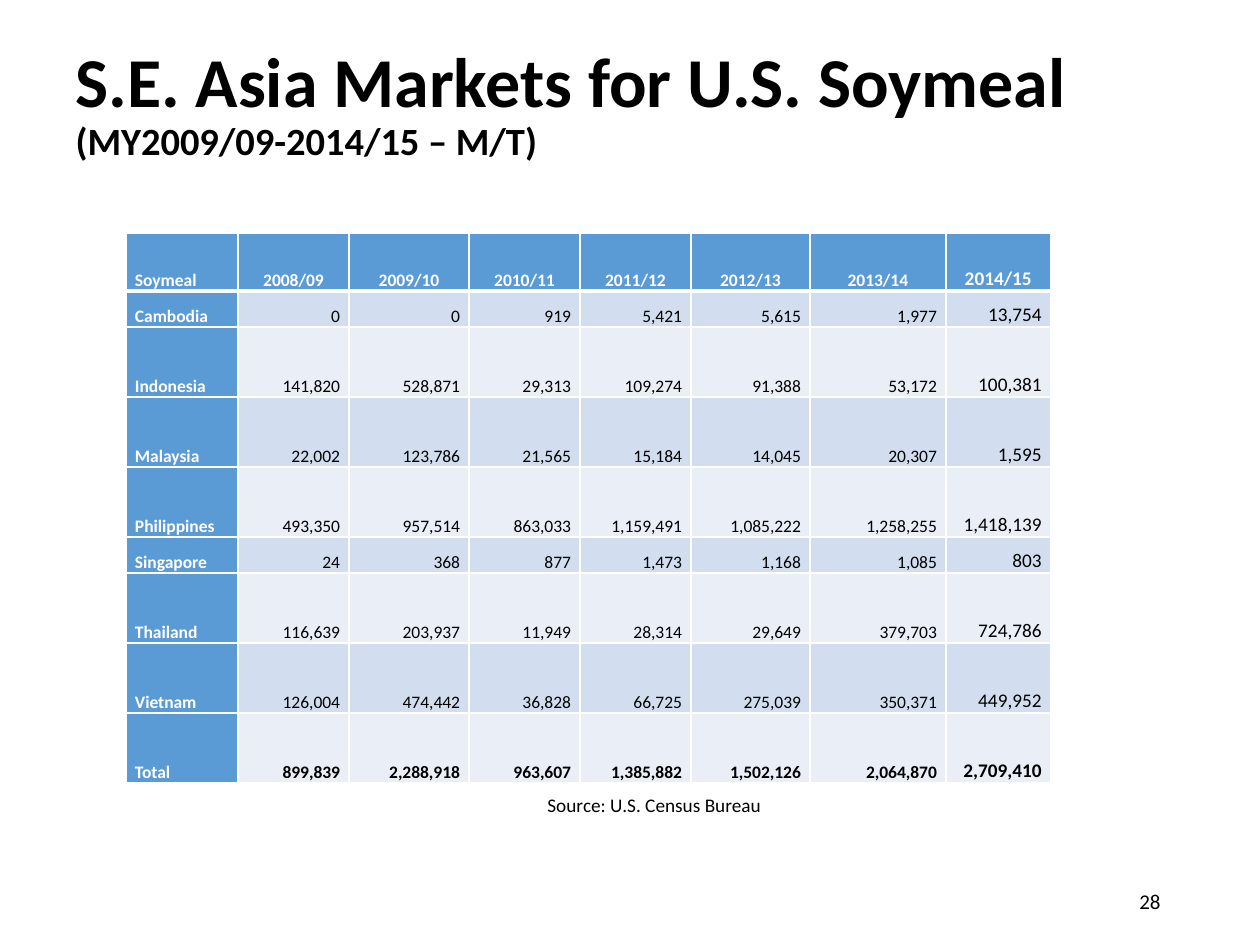
from lxml import etree
from pptx import Presentation
from pptx import util as u
from pptx.dml.color import RGBColor
from pptx.enum import text
from pptx.oxml.ns import qn

EMU_PER_PIXEL = 914400 / 126
FONT = "Calibri"
BLACK, WHITE = "000000", "FFFFFF"
BLUE, BAND_DARK, BAND_LIGHT = "5B9BD5", "D2DEEF", "EAEFF7"

COLUMN_WIDTHS = [112, 111, 120, 111, 111, 119, 136, 105]
HEADER_HEIGHT, LOW_HEIGHT, HIGH_HEIGHT = 58, 36, 70
LOW_ROWS = ("Cambodia", "Singapore")
EXPORTS = [
    ["Soymeal", "2008/09", "2009/10", "2010/11", "2011/12", "2012/13", "2013/14", "2014/15"],
    ["Cambodia", "0", "0", "919", "5,421", "5,615", "1,977", "13,754"],
    ["Indonesia", "141,820", "528,871", "29,313", "109,274", "91,388", "53,172", "100,381"],
    ["Malaysia", "22,002", "123,786", "21,565", "15,184", "14,045", "20,307", "1,595"],
    ["Philippines", "493,350", "957,514", "863,033", "1,159,491", "1,085,222", "1,258,255", "1,418,139"],
    ["Singapore", "24", "368", "877", "1,473", "1,168", "1,085", "803"],
    ["Thailand", "116,639", "203,937", "11,949", "28,314", "29,649", "379,703", "724,786"],
    ["Vietnam", "126,004", "474,442", "36,828", "66,725", "275,039", "350,371", "449,952"],
    ["Total", "899,839", "2,288,918", "963,607", "1,385,882", "1,502,126", "2,064,870", "2,709,410"],
]


def px(length):
    return u.Emu(round(length * EMU_PER_PIXEL))


def color(hex_string):
    return RGBColor.from_string(hex_string)


def format_run(run, size, hex_color=BLACK, bold=False):
    run.font.name = FONT
    run.font.size = u.Pt(size)
    run.font.bold = bold
    run.font.color.rgb = color(hex_color)


def set_title(slide):
    title = slide.shapes.title
    title.left, title.top, title.width, title.height = px(63), px(32), px(1134), px(147)
    frame = title.text_frame
    frame.text = "S.E. Asia Markets for U.S. Soymeal\v(MY2009/09-2014/15 – M/T)"
    frame.auto_size = text.MSO_AUTO_SIZE.NONE
    frame.vertical_anchor = text.MSO_ANCHOR.MIDDLE
    paragraph = frame.paragraphs[0]
    paragraph.alignment = text.PP_ALIGN.LEFT
    paragraph.line_spacing = 0.9
    for run, size in zip(paragraph.runs, (40, 22)):
        format_run(run, size, bold=True)


def add_label(slide, words, left, top, width, height, size,
              alignment=text.PP_ALIGN.LEFT, anchor=text.MSO_ANCHOR.TOP):
    box = slide.shapes.add_textbox(px(left), px(top), px(width), px(height))
    frame = box.text_frame
    frame.word_wrap = True
    frame.vertical_anchor = anchor
    frame.text = words
    paragraph = frame.paragraphs[0]
    paragraph.alignment = alignment
    format_run(paragraph.runs[0], size)


def set_borders(cell, top=1, bottom=1):
    """Give the cell white borders; widths are in points."""
    properties = cell._tc.get_or_add_tcPr()
    for tag, width in (("a:lnL", 1), ("a:lnR", 1), ("a:lnT", top), ("a:lnB", bottom)):
        line = etree.SubElement(properties, qn(tag), w=str(u.Pt(width)))
        fill = etree.SubElement(line, qn("a:solidFill"))
        etree.SubElement(fill, qn("a:srgbClr"), val=WHITE)


def fill_cell(cell, words, row, column):
    """Write and format one cell by its place in the table."""
    is_header, is_name = row == 0, column == 0
    is_total = row == len(EXPORTS) - 1
    is_latest = column == len(COLUMN_WIDTHS) - 1
    on_blue = is_header or is_name

    set_borders(cell, top=3 if row == 1 else 1, bottom=3 if is_header else 1)
    cell.fill.solid()
    cell.fill.fore_color.rgb = color(BLUE if on_blue else BAND_DARK if row % 2 else BAND_LIGHT)
    cell.margin_left = cell.margin_right = px(9)
    cell.margin_top = cell.margin_bottom = 0
    cell.vertical_anchor = text.MSO_ANCHOR.BOTTOM

    cell.text_frame.text = words
    paragraph = cell.text_frame.paragraphs[0]
    if is_name:
        paragraph.alignment = text.PP_ALIGN.LEFT
    else:
        paragraph.alignment = text.PP_ALIGN.CENTER if is_header else text.PP_ALIGN.RIGHT
    format_run(paragraph.runs[0], 11 if is_latest else 10,
               WHITE if on_blue else BLACK, on_blue or is_total)


def add_export_table(slide):
    heights = [HEADER_HEIGHT] + [LOW_HEIGHT if values[0] in LOW_ROWS else HIGH_HEIGHT
                                 for values in EXPORTS[1:]]
    table = slide.shapes.add_table(len(heights), len(COLUMN_WIDTHS), px(126), px(233),
                                   px(sum(COLUMN_WIDTHS)), px(sum(heights))).table
    table.first_col = True
    for column, width in zip(table.columns, COLUMN_WIDTHS):
        column.width = px(width)
    for row, (values, height) in enumerate(zip(EXPORTS, heights)):
        table.rows[row].height = px(height)
        for column, words in enumerate(values):
            fill_cell(table.cell(row, column), words, row, column)


def main():
    presentation = Presentation()
    presentation.slide_width, presentation.slide_height = px(1260), px(945)
    slide = presentation.slides.add_slide(presentation.slide_layouts[5])
    set_title(slide)
    add_export_table(slide)
    add_label(slide, "28", 890, 876, 283, 50, 12,
              text.PP_ALIGN.RIGHT, text.MSO_ANCHOR.MIDDLE)
    add_label(slide, "Source: U.S. Census Bureau", 535, 787, 325, 36, 11)
    presentation.save("out.pptx")


if __name__ == "__main__":
    main()
